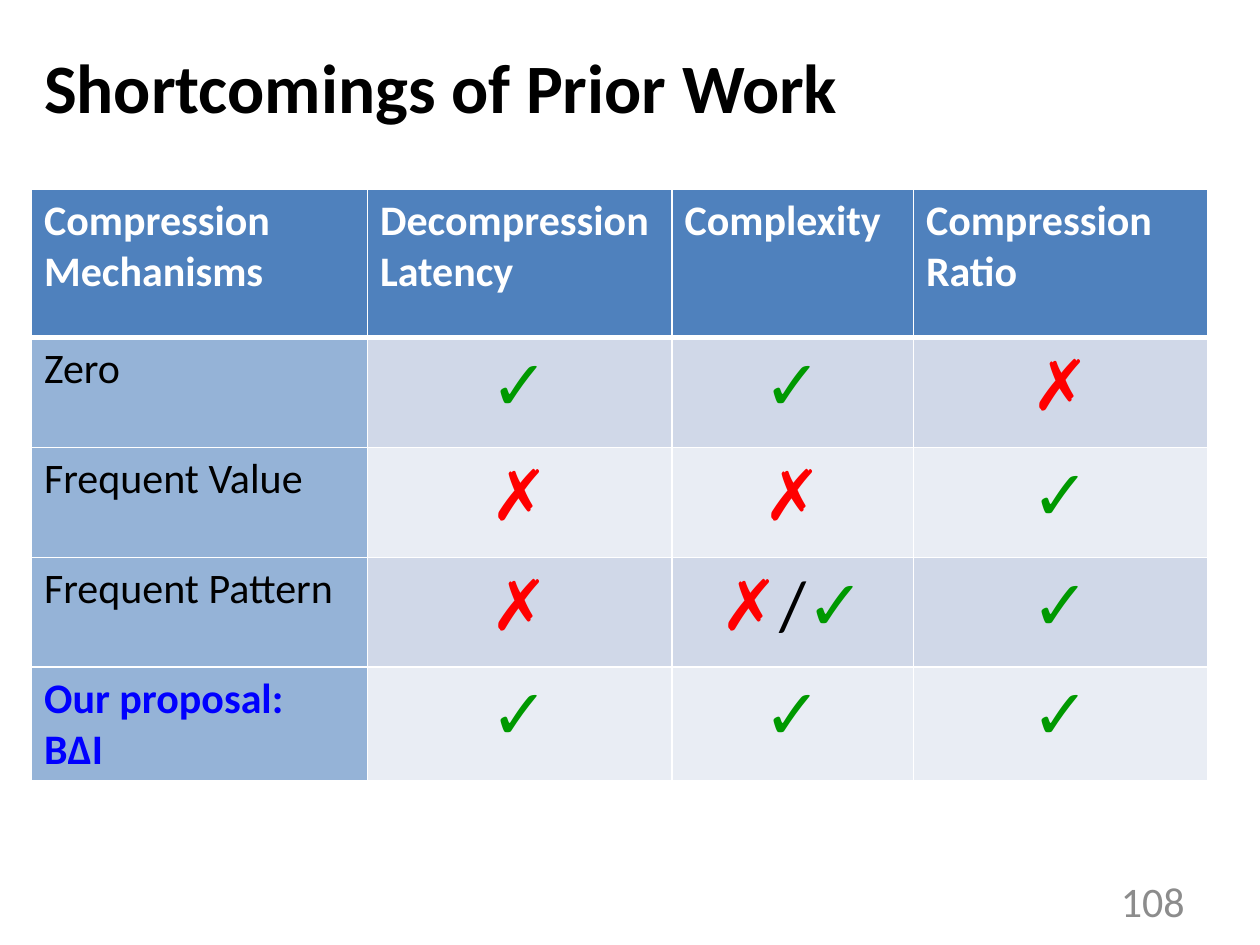
"""Build the slide that compares compression mechanisms in a table."""
from dataclasses import dataclass

from lxml import etree
from pptx import Presentation
from pptx.dml.color import RGBColor
from pptx.enum.text import MSO_ANCHOR, PP_ALIGN
from pptx.oxml.ns import qn
from pptx.util import Pt

LEFT, CENTER, RIGHT = PP_ALIGN.LEFT, PP_ALIGN.CENTER, PP_ALIGN.RIGHT
MIDDLE = MSO_ANCHOR.MIDDLE
FONT = "Calibri"
BLACK, WHITE, GRAY, BLUE = "000000", "FFFFFF", "8C8C8C", "0000FF"
HEADER_FILL, LABEL_FILL = "4F81BD", "95B3D7"
BAND_FILLS = ("D0D8E8", "E9EDF4")
MARK_COLORS = {"✓": "009900", "✗": "FF0000", "/": BLACK}
COLUMN_WIDTHS = (192, 174, 138, 168)
HEADER_HEIGHT, ROW_HEIGHT = 85, 62.75
HEADERS = (
    ("Compression", "Mechanisms"),
    ("Decompression", "Latency"),
    ("Complexity",),
    ("Compression", "Ratio"),
)


@dataclass(frozen=True)
class Mechanism:
    """A table row: label lines and one string of marks per criterion."""

    label: tuple[str, ...]
    marks: tuple[str, ...]
    color: str = BLACK
    bold: bool = False


MECHANISMS = (
    Mechanism(("Zero",), ("✓", "✓", "✗")),
    Mechanism(("Frequent Value",), ("✗", "✗", "✓")),
    Mechanism(("Frequent Pattern",), ("✗", "✗/✓", "✓")),
    Mechanism(("Our proposal:", "BΔI"), ("✓", "✓", "✓"), BLUE, True),
)


def rgb(color: str) -> RGBColor:
    """Turn a hex string into a colour."""
    return RGBColor.from_string(color)


def add_run(paragraph, text: str, size: float, color: str, bold: bool = False) -> None:
    """Append one formatted run to a paragraph."""
    run = paragraph.add_run()
    run.text = text
    run.font.name = FONT
    run.font.size = Pt(size)
    run.font.bold = bold
    run.font.color.rgb = rgb(color)


def place(shape, left: float, top: float, width: float, height: float) -> None:
    """Position a shape in points."""
    shape.left, shape.top = Pt(left), Pt(top)
    shape.width, shape.height = Pt(width), Pt(height)


def style_cell(cell, fill: str, bottom_width: float = 1, top_width: float = 1) -> None:
    """Fill a cell and give it white borders."""
    cell.fill.solid()
    cell.fill.fore_color.rgb = rgb(fill)
    properties = cell._tc.get_or_add_tcPr()
    widths = {"a:lnL": 1, "a:lnR": 1, "a:lnT": top_width, "a:lnB": bottom_width}
    for index, (tag, width) in enumerate(widths.items()):
        line = etree.Element(qn(tag), w=str(Pt(width)))
        solid = etree.SubElement(line, qn("a:solidFill"))
        etree.SubElement(solid, qn("a:srgbClr"), val=WHITE)
        properties.insert(index, line)


def write_lines(cell, lines: tuple[str, ...], color: str, bold: bool) -> None:
    """Write each line as its own paragraph."""
    frame = cell.text_frame
    for index, text in enumerate(lines):
        paragraph = frame.add_paragraph() if index else frame.paragraphs[0]
        paragraph.alignment = LEFT
        add_run(paragraph, text, 24, color, bold)


def write_marks(cell, marks: str) -> None:
    """Write centred marks, each in its own colour."""
    paragraph = cell.text_frame.paragraphs[0]
    paragraph.alignment = CENTER
    for mark in marks:
        add_run(paragraph, mark, 40, MARK_COLORS[mark])


def add_title(slide, text: str) -> None:
    """Move and format the title placeholder."""
    title = slide.shapes.title
    place(title, 18, 18.75, 678, 60)
    title.text_frame.vertical_anchor = MIDDLE
    paragraph = title.text_frame.paragraphs[0]
    paragraph.alignment = LEFT
    add_run(paragraph, text, 39.6, BLACK, True)


def add_page_number(slide, number: str) -> None:
    """Add the page number at the lower right."""
    frame = slide.shapes.add_textbox(Pt(516), Pt(500.5), Pt(168), Pt(28.75)).text_frame
    frame.word_wrap = True
    frame.vertical_anchor = MIDDLE
    paragraph = frame.paragraphs[0]
    paragraph.alignment = RIGHT
    add_run(paragraph, number, 24, GRAY)


def add_comparison(slide) -> None:
    """Add the table of mechanisms."""
    height = HEADER_HEIGHT + ROW_HEIGHT * len(MECHANISMS)
    table = slide.shapes.add_table(
        len(MECHANISMS) + 1, len(HEADERS),
        Pt(18), Pt(108), Pt(sum(COLUMN_WIDTHS)), Pt(height),
    ).table
    for column, width in zip(table.columns, COLUMN_WIDTHS):
        column.width = Pt(width)
    for index, row in enumerate(table.rows):
        row.height = Pt(ROW_HEIGHT if index else HEADER_HEIGHT)
    for column, lines in enumerate(HEADERS):
        cell = table.cell(0, column)
        style_cell(cell, HEADER_FILL, bottom_width=3)
        write_lines(cell, lines, WHITE, True)
    for row, mechanism in enumerate(MECHANISMS, start=1):
        top_width = 3 if row == 1 else 1
        label = table.cell(row, 0)
        style_cell(label, LABEL_FILL, top_width=top_width)
        write_lines(label, mechanism.label, mechanism.color, mechanism.bold)
        for column, marks in enumerate(mechanism.marks, start=1):
            cell = table.cell(row, column)
            style_cell(cell, BAND_FILLS[(row - 1) % 2], top_width=top_width)
            write_marks(cell, marks)


def main() -> None:
    """Build and save the presentation."""
    presentation = Presentation()
    presentation.slide_width, presentation.slide_height = Pt(720), Pt(540)
    slide = presentation.slides.add_slide(presentation.slide_layouts[5])
    add_title(slide, "Shortcomings of Prior Work")
    add_page_number(slide, "108")
    add_comparison(slide)
    presentation.save("out.pptx")


if __name__ == "__main__":
    main()
